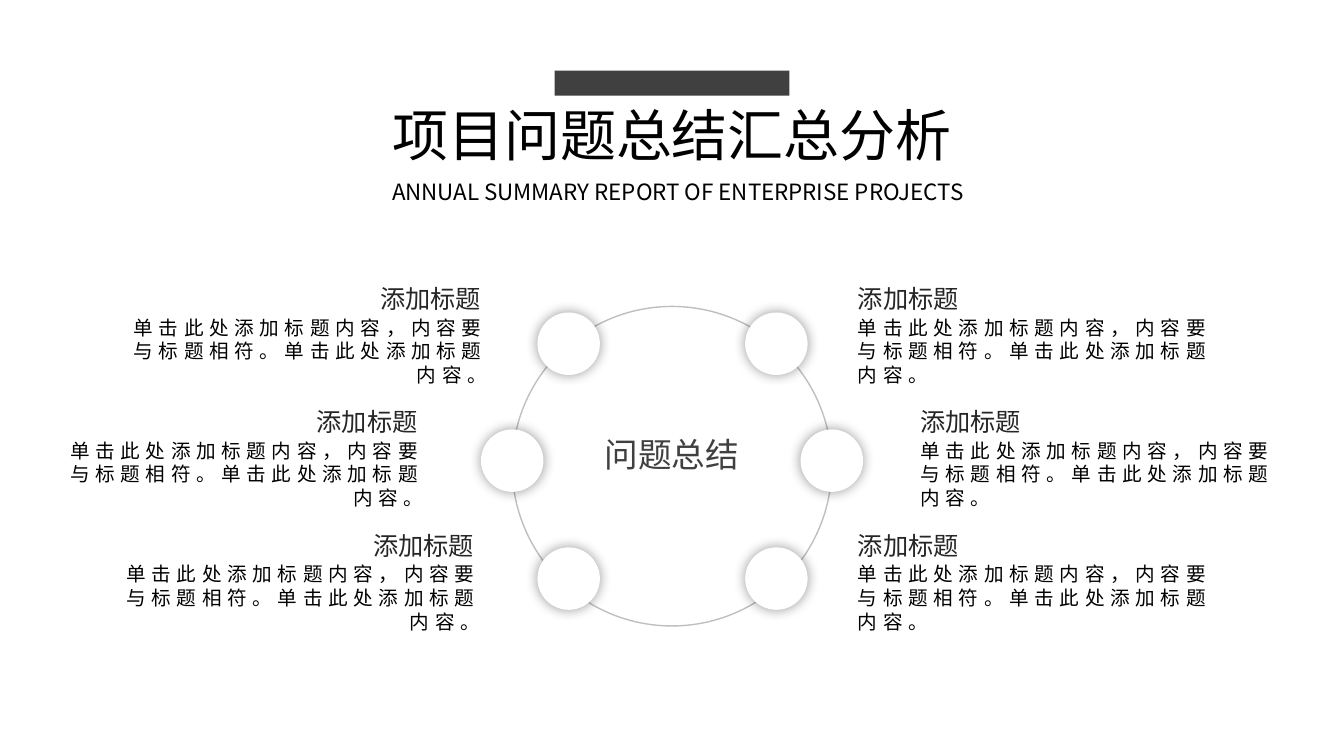
"""Build the project problem summary slide."""
from dataclasses import dataclass

import lxml.etree
import pptx
import pptx.dml.color
import pptx.enum.shapes
import pptx.enum.text
import pptx.oxml.ns
import pptx.util

EMU_PER_PX = 9144
ALIGN = pptx.enum.text.PP_ALIGN
OVAL = pptx.enum.shapes.MSO_SHAPE.OVAL
RECTANGLE = pptx.enum.shapes.MSO_SHAPE.RECTANGLE
ITEM_TITLE = "添加标题"
ITEM_BODY = "单击此处添加标题内容，内容要与标题相符。单击此处添加标题内容。"
NODE_SIZE = 62
ITEM_TITLE_WIDTH = 166
ITEM_BODY_WIDTH = 387
LEFT_TITLE_INSET = 6


@dataclass(frozen=True)
class Theme:
    """Hold the colours, font and type sizes of the slide."""
    font: str = "Noto Sans CJK SC"
    black: str = "000000"
    heading: str = "262626"
    dark: str = "404040"
    ring: str = "BFBFBF"
    white: str = "FFFFFF"
    title_size: int = 40
    center_size: int = 24
    heading_size: int = 18
    subtitle_size: int = 16
    body_size: int = 14
    body_spacing: int = 400


THEME = Theme()


def px(*lengths):
    """Turn pixel lengths into EMU."""
    return [pptx.util.Emu(length * EMU_PER_PX) for length in lengths]


def rgb(color):
    """Turn a hex string into a colour."""
    return pptx.dml.color.RGBColor.from_string(color)


def add_text(slide, box, text, size, color, align, spacing=None):
    """Add a wrapping text box with one formatted paragraph."""
    shape = slide.shapes.add_textbox(*px(*box))
    frame = shape.text_frame
    frame.word_wrap = True
    frame.auto_size = pptx.enum.text.MSO_AUTO_SIZE.SHAPE_TO_FIT_TEXT
    frame.text = text
    paragraph = frame.paragraphs[0]
    paragraph.alignment = align
    for run in paragraph.runs:
        run.font.size = pptx.util.Pt(size)
        run.font.color.rgb = rgb(color)
        run.font.name = THEME.font
        properties = run.font._element
        east_asian = lxml.etree.SubElement(properties, pptx.oxml.ns.qn("a:ea"))
        east_asian.set("typeface", THEME.font)
        if spacing:
            properties.set("spc", str(spacing))


def add_shape(slide, kind, box, fill=None, line=None):
    """Add a flat shape with an optional fill and outline."""
    shape = slide.shapes.add_shape(kind, *px(*box))
    shape.shadow.inherit = False
    if fill:
        shape.fill.solid()
        shape.fill.fore_color.rgb = rgb(fill)
    else:
        shape.fill.background()
    if line:
        shape.line.color.rgb = rgb(line)
        shape.line.width = pptx.util.Pt(1)
    else:
        shape.line.fill.background()
    return shape


def add_node(slide, left, top):
    """Add a white disc with a soft shadow all round."""
    shape = add_shape(slide, OVAL, (left, top, NODE_SIZE, NODE_SIZE), THEME.white)
    qn = pptx.oxml.ns.qn
    effects = shape._element.spPr.find(qn("a:effectLst"))
    shadow = lxml.etree.SubElement(
        effects, qn("a:outerShdw"), blurRad=str(pptx.util.Pt(9)),
        dist="0", dir="0", algn="ctr", rotWithShape="0")
    color = lxml.etree.SubElement(shadow, qn("a:srgbClr"), val=THEME.black)
    lxml.etree.SubElement(color, qn("a:alpha"), val="40000")


def add_item(slide, left, top, align):
    """Add a heading with its description below."""
    heading_left = left
    if align == ALIGN.RIGHT:
        heading_left += ITEM_BODY_WIDTH - ITEM_TITLE_WIDTH - LEFT_TITLE_INSET
    add_text(slide, (left, top + 32, ITEM_BODY_WIDTH, 81), ITEM_BODY,
             THEME.body_size, THEME.black, align, THEME.body_spacing)
    add_text(slide, (heading_left, top, ITEM_TITLE_WIDTH, 40), ITEM_TITLE,
             THEME.heading_size, THEME.heading, align)


def add_header(slide):
    """Add the title, subtitle and accent bar."""
    add_text(slide, (347, 95, 639, 77), "项目问题总结汇总分析",
             THEME.title_size, THEME.black, ALIGN.CENTER)
    add_text(slide, (358, 172, 629, 37),
             "ANNUAL SUMMARY REPORT OF ENTERPRISE PROJECTS",
             THEME.subtitle_size, THEME.black, ALIGN.CENTER)
    add_shape(slide, RECTANGLE, (550, 70, 233, 25), THEME.dark)


def main():
    """Build and save the slide."""
    presentation = pptx.Presentation()
    presentation.slide_width, presentation.slide_height = px(1333, 750)
    slide = presentation.slides.add_slide(presentation.slide_layouts[6])
    add_header(slide)
    add_shape(slide, OVAL, (508, 304, 317, 317), line=THEME.ring)
    rows = (
        (276, 310, 106, 533, 739, 841),
        (398, 426, 43, 477, 794, 903),
        (521, 543, 99, 533, 739, 841),
    )
    for item_top, node_top, left_item, left_node, right_node, right_item in rows:
        add_item(slide, left_item, item_top, ALIGN.RIGHT)
        add_item(slide, right_item, item_top, ALIGN.LEFT)
        add_node(slide, left_node, node_top)
        add_node(slide, right_node, node_top)
    add_text(slide, (580, 426, 173, 50), "问题总结",
             THEME.center_size, THEME.dark, ALIGN.CENTER)
    presentation.save("out.pptx")


if __name__ == "__main__":
    main()
